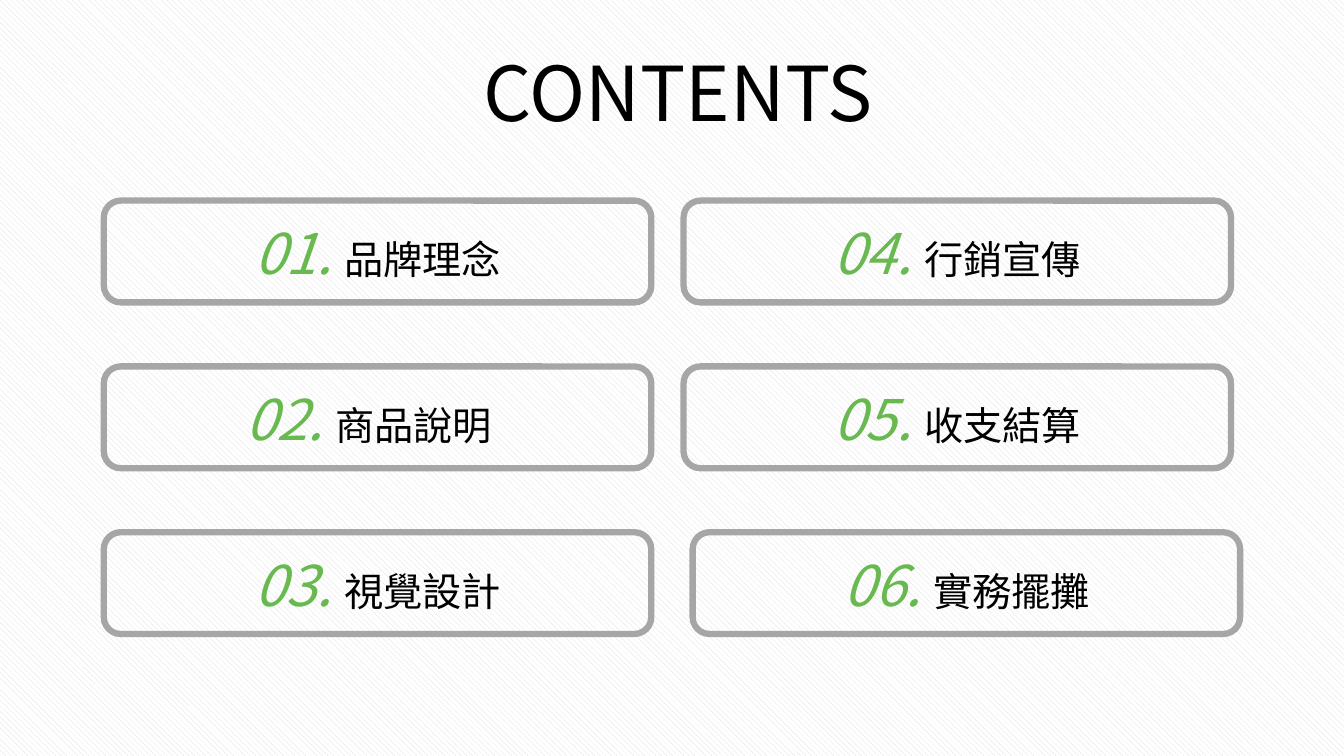
"""Build the contents slide: a title above six numbered, framed entries."""
from lxml.etree import SubElement
from pptx import Presentation
from pptx.dml.color import RGBColor
from pptx.enum.dml import MSO_PATTERN
from pptx.enum.shapes import MSO_SHAPE
from pptx.enum.text import MSO_ANCHOR, MSO_AUTO_SIZE, PP_ALIGN
from pptx.oxml.ns import qn
from pptx.util import Inches, Pt

TITLE = "CONTENTS"
# number, heading, frame left, label left
ENTRIES = [
    ("01. ", "品牌理念", 1.03, 1.9),
    ("02. ", "商品說明", 1.03, 1.81),
    ("03. ", "視覺設計", 1.03, 1.9),
    ("04. ", "行銷宣傳", 6.78, 7.65),
    ("05. ", "收支結算", 6.78, 7.65),
    ("06. ", "實務擺攤", 6.87, 7.74),
]
ROWS = 3
FIRST_TOP, ROW_STEP = 1.99, 1.645
FRAME_SIZE = (5.43, 1.01)
LABEL_SIZE = (3.69, 0.77)
LABEL_DROP = 0.13
FONT = "Noto Sans CJK JP"
BLACK, WHITE, GREEN, GREY, STRIPE = "000000", "FFFFFF", "68B950", "A6A6A6", "D9D9D9"
TITLE_FORMAT = {"size": Pt(54), "bold": False, "italic": False}
NUMBER_FORMAT = {"size": Pt(40), "italic": True}
HEADING_FORMAT = {"size": Pt(28), "italic": False}
FRAME_TEXT = {"word_wrap": True, "auto_size": MSO_AUTO_SIZE.NONE,
              "vertical_anchor": MSO_ANCHOR.MIDDLE}


def color(value):
    return RGBColor.from_string(value)


def apply(target, values):
    for name, value in values.items():
        setattr(target, name, value)


def add_span(para, text, values, ink):
    span = para.add_run()
    span.text = text
    apply(span.font, {"name": FONT, **values})
    span.font.color.rgb = color(ink)
    SubElement(span.font._element, qn("a:ea"), typeface=FONT)


def add_title(page):
    box = page.shapes.title
    apply(box, {"left": Inches(4.2), "top": Inches(0.4),
                "width": Inches(4.95), "height": Inches(1.01)})
    apply(box.text_frame, {**FRAME_TEXT, "margin_left": Inches(0.6)})
    para = box.text_frame.paragraphs[0]
    para.alignment = PP_ALIGN.LEFT
    add_span(para, TITLE, TITLE_FORMAT, BLACK)


def add_entry(page, top, number, heading, frame_left, label_left):
    frame = page.shapes.add_shape(
        MSO_SHAPE.ROUNDED_RECTANGLE,
        *map(Inches, (frame_left, top, *FRAME_SIZE)))
    frame.shadow.inherit = False
    frame.fill.background()
    frame.line.color.rgb = color(GREY)
    frame.line.width = Pt(4.5)

    label = page.shapes.add_textbox(
        *map(Inches, (label_left, top + LABEL_DROP, *LABEL_SIZE)))
    apply(label.text_frame, FRAME_TEXT)
    para = label.text_frame.paragraphs[0]
    para.alignment = PP_ALIGN.CENTER
    add_span(para, number, NUMBER_FORMAT, GREEN)
    add_span(para, heading, HEADING_FORMAT, BLACK)


def main():
    deck = Presentation()
    apply(deck, {"slide_width": Inches(13.33), "slide_height": Inches(7.5)})
    page = deck.slides.add_slide(deck.slide_layouts[5])
    fill = page.background.fill
    fill.patterned()
    fill.pattern = MSO_PATTERN.WIDE_DOWNWARD_DIAGONAL
    fill.fore_color.rgb = color(STRIPE)
    fill.back_color.rgb = color(WHITE)
    add_title(page)
    for index, entry in enumerate(ENTRIES):
        add_entry(page, FIRST_TOP + index % ROWS * ROW_STEP, *entry)
    deck.save("out.pptx")


if __name__ == "__main__":
    main()
